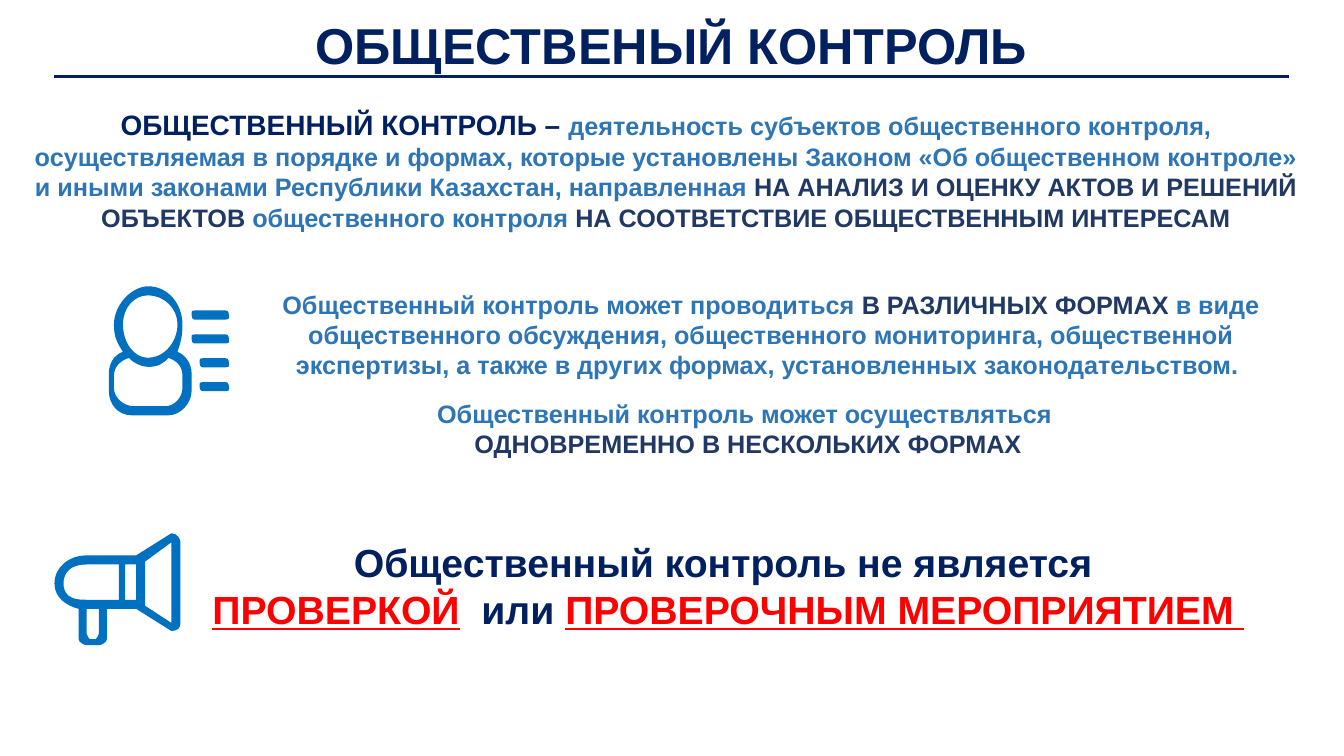
from lxml import etree
from pptx import Presentation
from pptx.dml.color import RGBColor
from pptx.enum.shapes import MSO_CONNECTOR
from pptx.enum.text import MSO_ANCHOR, MSO_AUTO_SIZE, PP_ALIGN
from pptx.oxml.ns import qn
from pptx.util import Inches, Pt

STRAIGHT = MSO_CONNECTOR.STRAIGHT
TOP, MIDDLE = MSO_ANCHOR.TOP, MSO_ANCHOR.MIDDLE
GROW = MSO_AUTO_SIZE.SHAPE_TO_FIT_TEXT
CENTER = PP_ALIGN.CENTER

FONT = "Arial"
NAVY, DARK, BLUE, RED, ICON = "002060", "203864", "2E75B6", "FF0000", "0070C0"

# Icon contours in hundredths of an inch: a pair is a line to that point,
# six numbers are a Bezier curve (two controls and the end point)
MEGAPHONE = [
    # Silhouette
    [(116, 0), (81, 22), (32, 22), (15, 22, 0, 33, 0, 50), (0, 64, 12, 72, 24, 75),
     (24, 105), (24, 108, 29, 111, 32, 111), (44, 111), (47, 111, 52, 108, 52, 105),
     (52, 75), (81, 75), (116, 97), (122, 97, 125, 94, 125, 89), (125, 9),
     (125, 6, 122, 0, 116, 0)],
    # Handle, body, band and horn openings
    [(44, 100), (44, 102, 41, 105, 41, 105), (35, 105), (35, 105, 32, 102, 32, 100),
     (32, 75), (44, 75)],
    [(64, 66), (32, 66), (24, 66, 9, 66, 9, 50), (9, 33, 24, 31, 32, 31), (64, 31)],
    [(81, 66), (70, 66), (70, 31), (81, 31)],
    [(116, 89), (90, 72), (90, 28), (116, 9)],
]
PERSON = [
    # Silhouette
    [(68, 65), (71, 56, 73, 50, 73, 38), (73, 18, 59, 0, 39, 0), (23, 0, 5, 18, 5, 38),
     (5, 50, 8, 56, 14, 65), (5, 68, 0, 77, 0, 86), (0, 104), (0, 116, 8, 128, 23, 128),
     (59, 128), (71, 128, 82, 116, 82, 104), (82, 86), (82, 77, 76, 68, 68, 65)],
    # Head and body openings
    [(14, 38), (14, 21, 25, 9, 39, 9), (54, 9, 68, 21, 68, 38),
     (68, 56, 54, 71, 39, 71), (25, 71, 14, 56, 14, 38)],
    [(73, 101), (73, 110, 65, 119, 56, 119), (25, 119), (14, 119, 5, 110, 5, 101),
     (5, 89), (5, 80, 11, 74, 20, 71), (25, 77, 34, 80, 39, 80),
     (48, 80, 54, 77, 59, 71), (68, 74, 73, 80, 73, 89)],
]


def rgb(value):
    return RGBColor.from_string(value)


def add_run(p, text, size=18, color=BLUE, underline=None):
    r = p.add_run()
    r.text = text
    r.font.name, r.font.size, r.font.bold = FONT, Pt(size), True
    r.font.color.rgb = rgb(color)
    r.font.underline = underline


def add_text(slide, box, paragraphs, anchor=TOP):
    """Each paragraph is a list of (text, format) pairs."""
    tf = slide.shapes.add_textbox(*map(Inches, box)).text_frame
    tf.word_wrap, tf.auto_size, tf.vertical_anchor = True, GROW, anchor
    for i, runs in enumerate(paragraphs):
        p = tf.add_paragraph() if i else tf.paragraphs[0]
        p.alignment = CENTER
        for text, fmt in runs:
            add_run(p, text, **fmt)


def bend_segments(sp, contours):
    """Turn the line segments that stand for curves into real curves."""
    steps = [step for contour in contours for step in contour[1:]]
    segments = list(sp._element.iter(qn("a:lnTo")))
    for segment, step in zip(segments, steps):
        if len(step) == 6:
            segment_points = zip(step[::2], step[1::2])
            curve = etree.Element(qn("a:cubicBezTo"))
            for x, y in segment_points:
                etree.SubElement(curve, qn("a:pt"), x=str(Inches(x / 100)),
                                 y=str(Inches(y / 100)))
            segment.getparent().replace(segment, curve)


def add_icon(slide, left, top, contours):
    builder = None
    for contour in contours:
        points = [(Inches(left + step[-2] / 100), Inches(top + step[-1] / 100))
                  for step in contour]
        if builder is None:
            builder = slide.shapes.build_freeform(*points[0])
        else:
            builder.move_to(*points[0])
        builder.add_line_segments(points[1:], close=True)
    sp = builder.convert_to_shape()
    bend_segments(sp, contours)
    sp.shadow.inherit = False
    sp.fill.solid()
    sp.fill.fore_color.rgb = rgb(ICON)
    sp.line.fill.background()


def text_bar(left, right, top, height=9, r=3):
    """Bar with rounded ends."""
    middle, bottom = top + height / 2, top + height
    return [(left + r, bottom), (right - r, bottom),
            (right, bottom, right, bottom, right, middle),
            (right, middle, right, top, right - r, top),
            (left + r, top), (left, top, left, top, left, middle),
            (left, bottom, left + r, bottom, left + r, bottom)]


def add_title(slide, left, top, width, height):
    add_text(slide, (left, top, width, height),
             [[("ОБЩЕСТВЕНЫЙ КОНТРОЛЬ", dict(size=36, color=NAVY))]], MIDDLE)
    rule_y = top + height - 0.03
    line = slide.shapes.add_connector(STRAIGHT, Inches(left + 0.54), Inches(rule_y),
                                      Inches(left + width - 0.54), Inches(rule_y))
    line.line.color.rgb = rgb(NAVY)
    line.line.width = Pt(2.25)
    etree.SubElement(line._element.spPr, qn("a:effectLst"))


def add_definition(slide, left, top, width, height):
    dark = dict(color=DARK)
    add_text(slide, (left, top, width, height), [[
        ("ОБЩЕСТВЕННЫЙ КОНТРОЛЬ – ", dict(size=20, color=NAVY)),
        ("деятельность субъектов общественного контроля, осуществляемая в порядке "
         "и формах, которые установлены Законом «Об общественном контроле» и иными "
         "законами Республики Казахстан, направленная ", {}),
        ("НА АНАЛИЗ И ОЦЕНКУ АКТОВ И РЕШЕНИЙ ОБЪЕКТОВ ", dark),
        ("общественного контроля ", {}),
        ("НА СООТВЕТСТВИЕ ОБЩЕСТВЕННЫМ ИНТЕРЕСАМ", dark),
    ]])


def add_forms(slide, left, top):
    dark = dict(color=DARK)
    bars = [text_bar(x, 119, 24 + 23.7 * i) for i, x in enumerate((82, 82, 90, 90))]
    add_icon(slide, left, top + 0.02, PERSON + bars)
    add_text(slide, (left + 1.19, top, 10.75, 1.01), [[
        ("Общественный контроль может проводиться ", {}),
        ("В РАЗЛИЧНЫХ ФОРМАХ ", dark),
        ("в виде общественного обсуждения, общественного мониторинга, общественной "
         "экспертизы, а также в других формах, установленных законодательством. ", {}),
    ]])
    add_text(slide, (left + 1.61, top + 1.08, 9.46, 0.71), [
        [("Общественный контроль может осуществляться ", {})],
        [("ОДНОВРЕМЕННО В НЕСКОЛЬКИХ ФОРМАХ", dark)],
    ])


def add_conclusion(slide, left, top):
    navy = dict(size=28, color=NAVY)
    red = dict(size=28, color=RED)
    marked = dict(red, underline=True)
    add_icon(slide, left, top, MEGAPHONE)
    add_text(slide, (left + 1.13, top, 11.11, 1.04), [
        [("Общественный контроль не является ", navy)],
        [("ПРОВЕРКОЙ", marked), ("  ", red), ("или ", navy),
         ("ПРОВЕРОЧНЫМ МЕРОПРИЯТИЕМ ", marked)],
    ])


def main():
    prs = Presentation()
    prs.slide_width, prs.slide_height = Inches(13.33), Inches(7.5)
    slide = prs.slides.add_slide(prs.slide_layouts[6])
    add_title(slide, 0, 0.08, 13.32, 0.71)
    add_definition(slide, 0.19, 1.02, 12.83, 1.35)
    add_forms(slide, 1.08, 2.82)
    add_conclusion(slide, 0.54, 5.29)
    prs.save("out.pptx")


if __name__ == "__main__":
    main()
